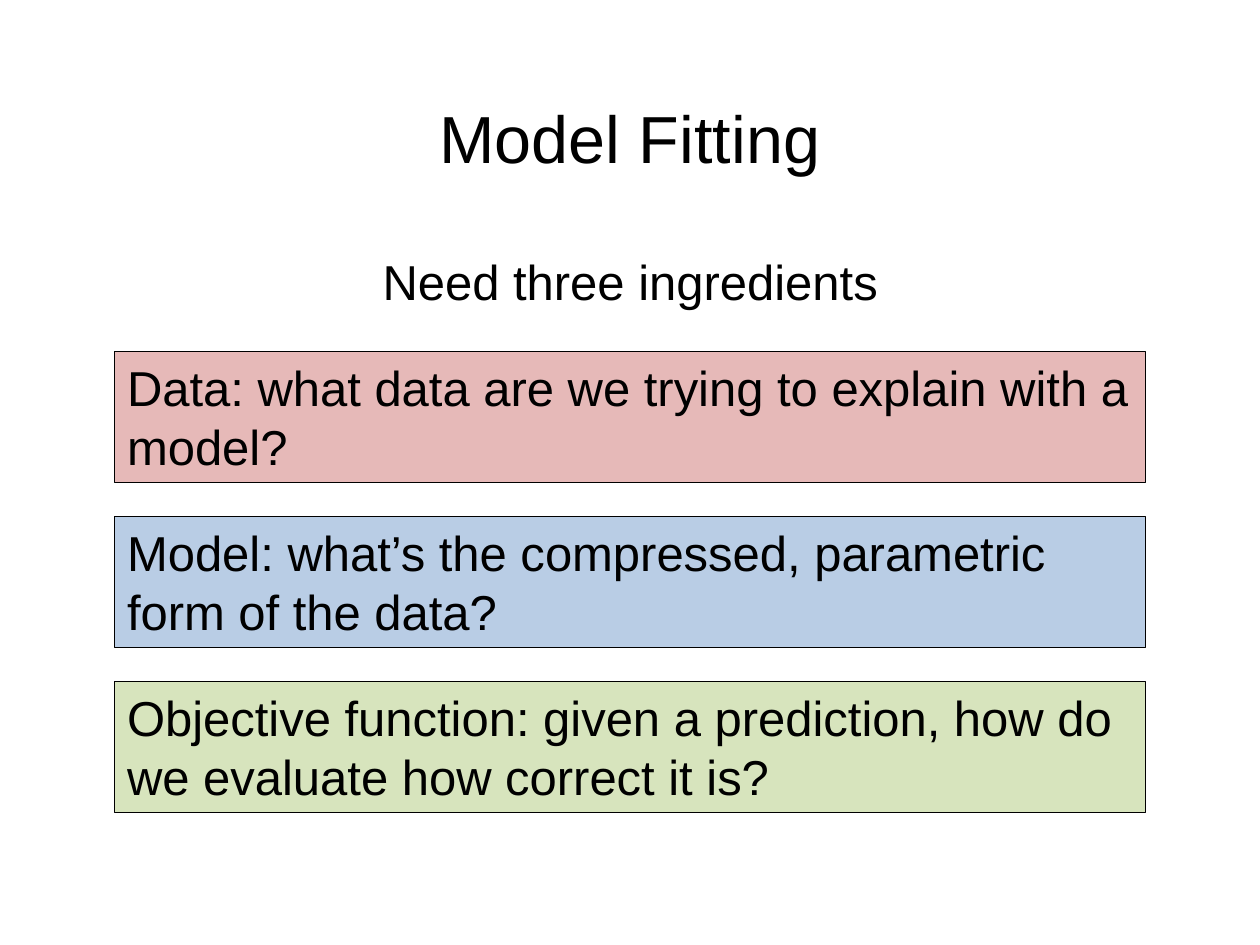
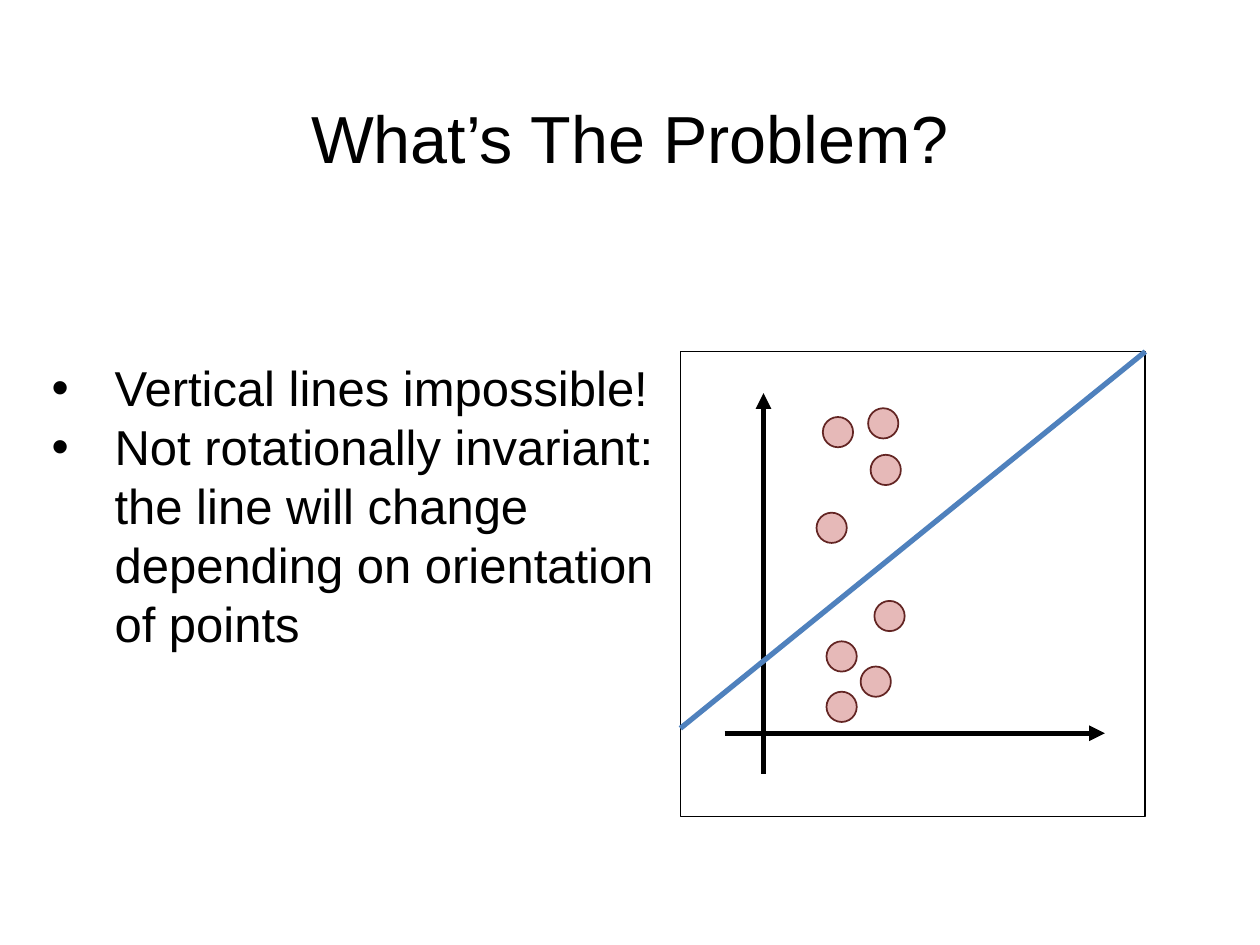
from pptx import Presentation
from pptx.dml.color import RGBColor
from pptx.enum import shapes, text
from pptx.oxml.ns import qn
from pptx.util import Pt
from lxml import etree

FONT = "Arial"
BLACK, PINK, BLUE, GREEN = "000000", "E6B9B8", "B9CDE5", "D7E4BD"
MAROON, FIT_BLUE = "632523", "4F81BD"
TITLE_BOX = (49.7, 28.8, 620.6, 104.4)
LEFT, RIGHT, TOP = 65.5, 654.5, 200.9

FITTING_TITLE = "Model Fitting"
FITTING_LEAD = "Need three ingredients"
INGREDIENTS = [
    ("Data: what data are we trying to explain with a model?", PINK),
    ("Model: what’s the compressed, parametric form of the data?", BLUE),
    ("Objective function: given a prediction, how do we evaluate how correct it is?", GREEN),
]
INGREDIENT_HEIGHT, INGREDIENT_PITCH = 74.9, 94.3

PROBLEM_TITLE = "What’s The Problem?"
PROBLEMS = [
    "Vertical lines impossible!",
    "Not rotationally invariant: the line will change depending on orientation of points",
]
PROBLEM_BOX = (22.3, TOP, 360.7, 211)
PLOT_SIDE, DOT_SIZE = 265.7, 17.3
PLOT_LEFT = RIGHT - PLOT_SIDE
AXES = [((436.3, 442.1), (436.3, 224.6)), ((414, 419), (631.4, 419))]
FIT_LINE = ((PLOT_LEFT, 416.2), (RIGHT, TOP))
DOTS = [
    (472.3, 366.5), (499.7, 343.4), (466.6, 293), (497.5, 259.9),
    (491.8, 380.9), (472.3, 395.3), (496.1, 233.3), (470.2, 238.3),
]


def rgb(color):
    return RGBColor.from_string(color)


def pts(values):
    return [Pt(v) for v in values]


def write(sp, lines, size=28, align=text.PP_ALIGN.LEFT, anchor=text.MSO_ANCHOR.TOP, spacing=1.0):
    tf = sp.text_frame
    tf.text = "\n".join(lines)
    tf.word_wrap = True
    tf.auto_size = text.MSO_AUTO_SIZE.NONE
    tf.vertical_anchor = anchor
    for p in tf.paragraphs:
        p.alignment = align
        p.line_spacing = spacing
        p.space_before = Pt(0)
        for r in p.runs:
            r.font.name, r.font.size = FONT, Pt(size)
            r.font.color.rgb = rgb(BLACK)


def place(sp, box):
    sp.left, sp.top, sp.width, sp.height = pts(box)


def add_slide(prs, layout, title):
    s = prs.slides.add_slide(prs.slide_layouts[layout])
    place(s.shapes.title, TITLE_BOX)
    write(s.shapes.title, [title], 38, text.PP_ALIGN.CENTER, text.MSO_ANCHOR.MIDDLE, 0.9)
    return s


def add_shape(s, kind, box, fill=None, line=BLACK, width=1):
    sp = s.shapes.add_shape(kind, *pts(box))
    sp.shadow.inherit = False
    if fill:
        sp.fill.solid()
        sp.fill.fore_color.rgb = rgb(fill)
    else:
        sp.fill.background()
    sp.line.color.rgb = rgb(line)
    sp.line.width = Pt(width)
    return sp


def add_line(s, start, end, color, arrow=False):
    line = s.shapes.add_connector(shapes.MSO_CONNECTOR.STRAIGHT, *pts(start + end))
    line.line.color.rgb = rgb(color)
    line.line.width = Pt(3)
    if arrow:
        etree.SubElement(line.line._get_or_add_ln(), qn("a:tailEnd"), type="triangle")
    etree.SubElement(line._element.spPr, qn("a:effectLst"))


def build_fitting(prs):
    s = add_slide(prs, 5, FITTING_TITLE)
    lead = s.shapes.add_textbox(*pts((LEFT, 140.4, RIGHT - LEFT, 41.2)))
    write(lead, [FITTING_LEAD], align=text.PP_ALIGN.CENTER)
    for i, (words, fill) in enumerate(INGREDIENTS):
        box = (LEFT, TOP + i * INGREDIENT_PITCH, RIGHT - LEFT, INGREDIENT_HEIGHT)
        write(add_shape(s, shapes.MSO_SHAPE.RECTANGLE, box, fill, width=0.75), [words])


def build_problem(prs):
    s = add_slide(prs, 1, PROBLEM_TITLE)
    add_shape(s, shapes.MSO_SHAPE.RECTANGLE, (PLOT_LEFT, TOP, PLOT_SIDE, PLOT_SIDE))
    for start, end in AXES:
        add_line(s, start, end, BLACK, arrow=True)
    for x, y in DOTS:
        add_shape(s, shapes.MSO_SHAPE.OVAL, (x, y, DOT_SIZE, DOT_SIZE), PINK, MAROON)
    add_line(s, *FIT_LINE, FIT_BLUE)
    body = s.placeholders[1]
    place(body, PROBLEM_BOX)
    write(body, PROBLEMS)
    for p in body.text_frame.paragraphs:
        pPr = p._p.get_or_add_pPr()
        pPr.set("marL", str(Pt(36)))
        pPr.set("indent", str(Pt(-36)))


def main():
    prs = Presentation()
    prs.slide_width, prs.slide_height = Pt(720), Pt(540)
    build_fitting(prs)
    build_problem(prs)
    prs.save("out.pptx")


if __name__ == "__main__":
    main()
